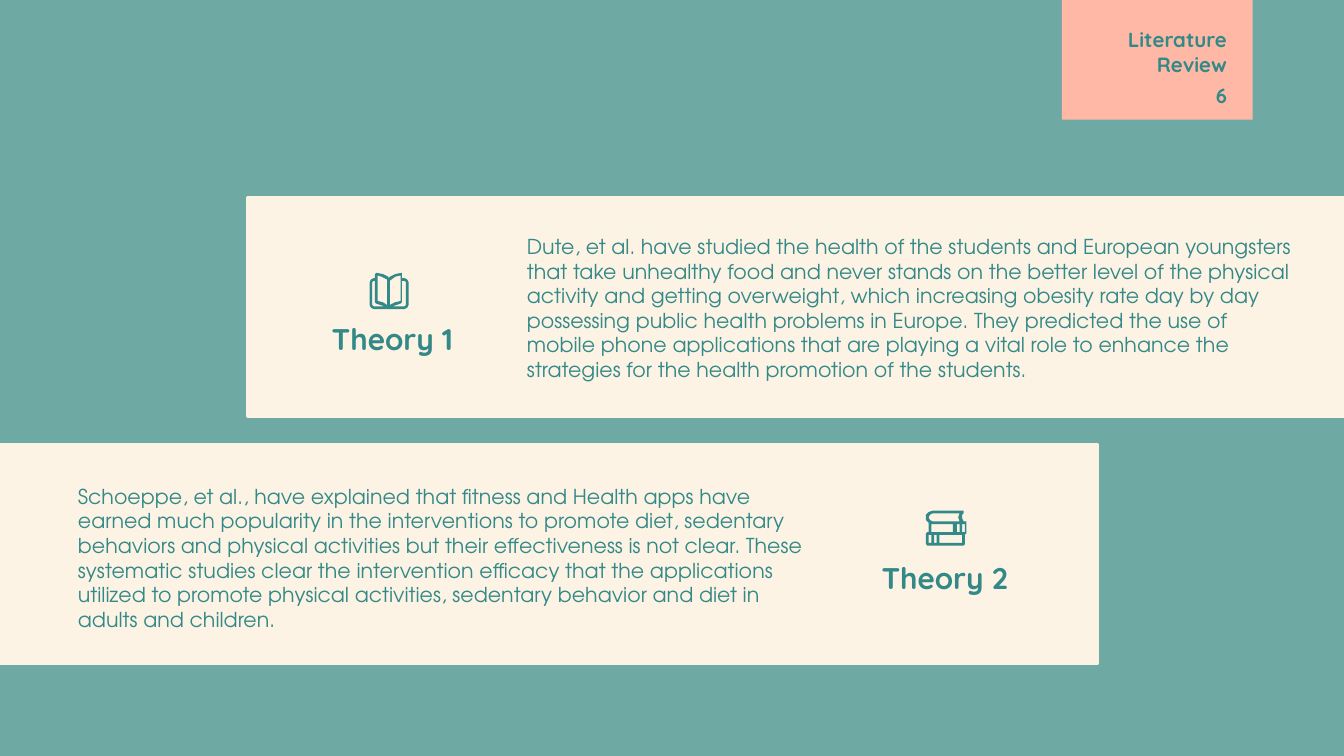
from dataclasses import dataclass

from pptx import Presentation
from pptx.dml.color import RGBColor
from pptx.enum.shapes import MSO_SHAPE
from pptx.enum.text import MSO_ANCHOR, MSO_AUTO_SIZE, PP_ALIGN
from pptx.oxml.ns import qn
from pptx.util import Inches, Pt

RECT = MSO_SHAPE.RECTANGLE
TOP, MIDDLE, BOTTOM = MSO_ANCHOR.TOP, MSO_ANCHOR.MIDDLE, MSO_ANCHOR.BOTTOM
LEFT, CENTER, RIGHT = PP_ALIGN.LEFT, PP_ALIGN.CENTER, PP_ALIGN.RIGHT
NO_FIT = MSO_AUTO_SIZE.NONE

COLORS = {"background": "6FA9A3", "teal": "338987", "cream": "FDF3E5", "coral": "FFB8A5"}
HEADING, BODY = "Quicksand", "TeX Gyre Adventor"

Box = tuple[float, float, float, float]
Contour = list[tuple[int, int]]


@dataclass
class Theory:
    panel: Box
    heading: str
    heading_box: Box
    align: PP_ALIGN
    text: str
    text_box: Box
    icon: list[Contour]


def block(left: int, top: int, right: int, bottom: int) -> Contour:
    return [(left, top), (right, top), (right, bottom), (left, bottom)]


# Icon contours in hundredths of an inch: outline first, then the holes
BOOK = [
    [(280, 203), (279, 204), (279, 207), (278, 207), (276, 208), (275, 210),
     (275, 227), (276, 229), (278, 230), (301, 230), (303, 229), (304, 227),
     (304, 210), (303, 208), (301, 207), (299, 207), (299, 203), (294, 204),
     (290, 206), (289, 207), (289, 206), (285, 204)],
    [(281, 205), (284, 206), (288, 208), (288, 227), (285, 225), (281, 224)],
    [(298, 205), (298, 224), (294, 225), (290, 227), (290, 209), (294, 206)],
    [(279, 209), (279, 225), (280, 226), (283, 227), (286, 228), (278, 228),
     (277, 227), (277, 210), (278, 209)],
    [(301, 209), (302, 210), (302, 227), (301, 228), (292, 228), (295, 227),
     (298, 226), (299, 225), (299, 209)],
]
BOOKS = [
    [(694, 380), (691, 381), (689, 383), (689, 387), (691, 389), (691, 396),
     (690, 396), (689, 397), (689, 405), (690, 406), (717, 406), (718, 405),
     (718, 398), (719, 397), (719, 388), (717, 388), (716, 386), (716, 383),
     (717, 382), (717, 380)],
    [(714, 382), (713, 385), (714, 388), (694, 388), (692, 387), (691, 385),
     (692, 383), (694, 382)],
    block(693, 390, 709, 396), block(712, 390, 714, 396), block(716, 390, 718, 396),
    block(691, 398, 693, 404), block(695, 398, 697, 404), block(699, 398, 716, 404),
]

THEORIES = [
    Theory((1.84, 1.47, 8.33, 1.63), "Theory 1", (2.37, 2.33, 2.86, 0.42), LEFT,
           "Dute, et al. have studied the health of the students and European youngsters "
           "that take unhealthy food and never stands on the better level of the physical "
           "activity and getting overweight, which increasing obesity rate day by day "
           "possessing public health problems in Europe. They predicted the use of mobile "
           "phone applications that are playing a vital role to enhance the strategies for "
           "the health promotion of the students.",
           (3.82, 1.94, 5.91, 0.7), BOOK),
    Theory((-0.08, 3.31, 8.25, 1.63), "Theory 2", (5.6, 4.11, 2.86, 0.42), CENTER,
           "Schoeppe, et al., have explained that fitness and Health apps have earned much "
           "popularity in the interventions to promote diet, sedentary behaviors and "
           "physical activities but their effectiveness is not clear. These systematic "
           "studies clear the intervention efficacy that the applications utilized to "
           "promote physical activities, sedentary behavior and diet in adults and children.",
           (0.48, 3.8, 5.7, 0.7), BOOKS),
]


def color(name: str) -> RGBColor:
    return RGBColor.from_string(COLORS[name])


def add_block(box: Box, fill: str, line_width: float = 0) -> None:
    sp = s.shapes.add_shape(RECT, *map(Inches, box))
    sp.shadow.inherit = False
    sp.fill.solid()
    sp.fill.fore_color.rgb = color(fill)
    if line_width:
        sp.line.color.rgb = color(fill)
        sp.line.width = Pt(line_width)
    else:
        sp.line.fill.background()


def add_icon(contours: list[Contour]) -> None:
    builder = s.shapes.build_freeform(*contours[0][0], scale=Inches(0.01))
    builder.add_line_segments(contours[0][1:], close=True)
    for hole in contours[1:]:
        builder.move_to(*hole[0])
        builder.add_line_segments(hole[1:], close=True)
    sp = builder.convert_to_shape()
    sp.shadow.inherit = False
    sp.fill.solid()
    sp.fill.fore_color.rgb = color("teal")
    sp.line.fill.background()


def write(sp, box: Box, text: str, font: str, size: float, align: PP_ALIGN,
          anchor: MSO_ANCHOR) -> None:
    sp.left, sp.top, sp.width, sp.height = map(Inches, box)
    tf = sp.text_frame
    tf.word_wrap = True
    tf.auto_size = NO_FIT
    tf.vertical_anchor = anchor
    tf.margin_left = tf.margin_right = tf.margin_top = tf.margin_bottom = Inches(0.1)
    p = tf.paragraphs[0]
    p.alignment = align
    p.space_before = Pt(0)
    if sp.is_placeholder:
        pPr = p._p.get_or_add_pPr()
        pPr.set("marL", "0")
        pPr.set("indent", "0")
        pPr.append(pPr.makeelement(qn("a:buNone"), {}))
        s.shapes._spTree.append(sp._element)  # bring in front of the panels
    r = p.add_run()
    r.text = text
    r.font.name = font
    r.font.size = Pt(size)
    r.font.bold = font == HEADING
    r.font.color.rgb = color("teal")


prs = Presentation()
prs.slide_width = Inches(10)
prs.slide_height = prs.slide_width * 9 // 16
s = prs.slides.add_slide(prs.slide_layouts[3])
s.background.fill.solid()
s.background.fill.fore_color.rgb = color("background")
title, *bodies = list(s.placeholders)[:3]

# Corner tab with the section title and page number
add_block((7.9, 0, 1.42, 0.89), "coral")
write(title, (8.06, 0.14, 1.17, 0.53), "Literature Review", HEADING, 11, RIGHT, BOTTOM)
number_box = s.shapes.add_textbox(0, 0, 0, 0)
write(number_box, (8.63, 0.52, 0.6, 0.43), "6", HEADING, 11, RIGHT, TOP)

# Theory panels
for theory, body in zip(THEORIES, bodies):
    add_block(theory.panel, "cream", 1.5)
    write(body, theory.text_box, theory.text, BODY, 11, LEFT, MIDDLE)
    add_icon(theory.icon)
    heading = s.shapes.add_textbox(0, 0, 0, 0)
    write(heading, theory.heading_box, theory.heading, HEADING, 16, theory.align, BOTTOM)

prs.save("out.pptx")
